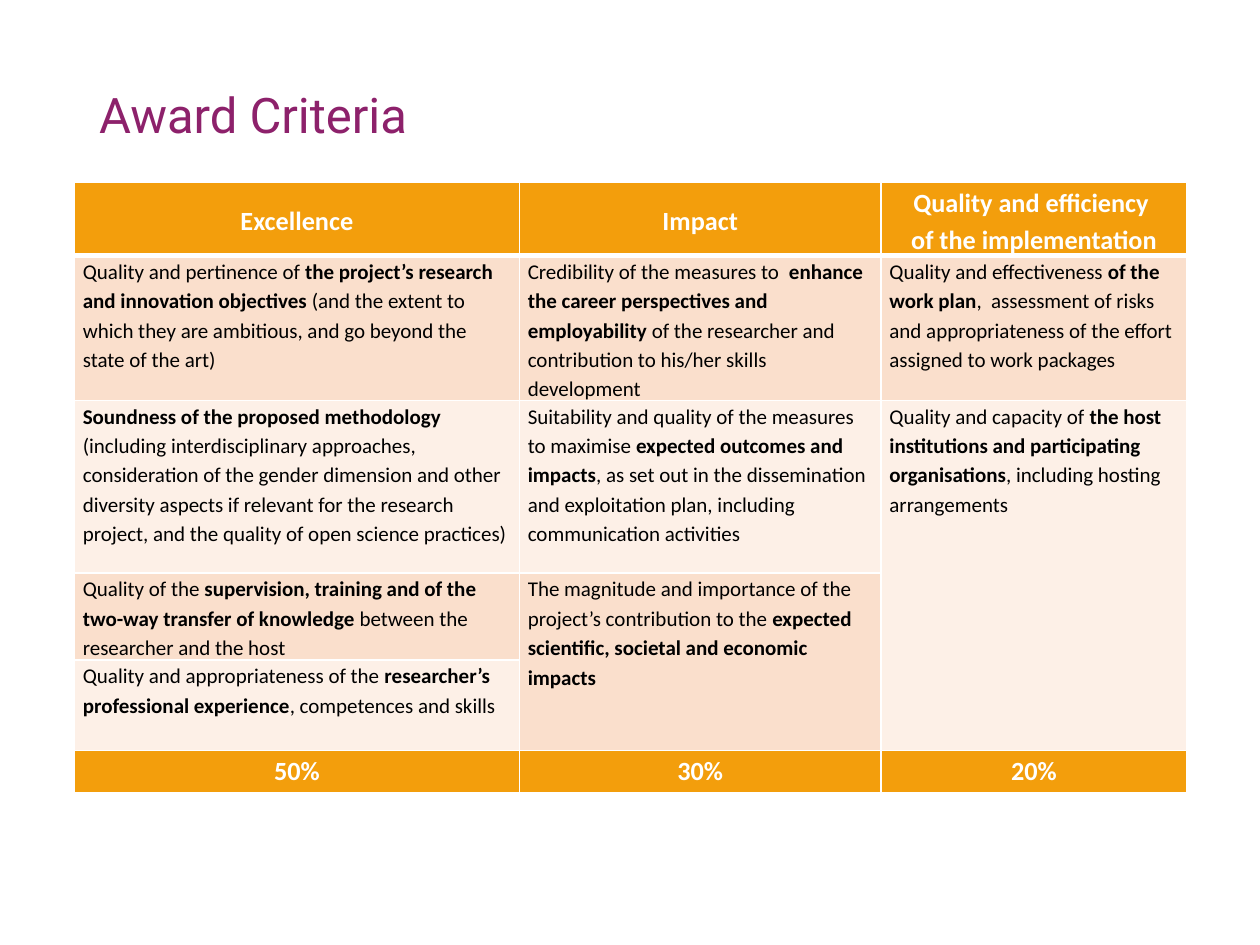
from pptx import Presentation
from pptx.dml.color import RGBColor
from pptx.enum.text import MSO_ANCHOR, PP_ALIGN
from pptx.oxml import parse_xml
from pptx.oxml.ns import nsdecls
from pptx.util import Cm, Pt

PURPLE = RGBColor(0x8D, 0x21, 0x6B)
ORANGE = RGBColor(0xF3, 0x9E, 0x0C)
PEACH = RGBColor(0xFA, 0xDF, 0xCC)
CREAM = RGBColor(0xFD, 0xF0, 0xE7)
WHITE = RGBColor(0xFF, 0xFF, 0xFF)
BLACK = RGBColor(0, 0, 0)

# Content: ** switches bold on and off, None continues the cell above
TITLE = "Award Criteria"
ROWS = [
    ["**Excellence", "**Impact", "**Quality and efficiency \vof the implementation"],
    ["Quality and pertinence of **the project’s research and innovation objectives** "
     "(and the extent to which they are ambitious, and go beyond the state of the art)",
     "Credibility of the measures to  **enhance the career perspectives and "
     "employability **of the researcher and contribution to his/her skills development",
     "Quality and effectiveness **of the work plan**,  assessment of risks and "
     "appropriateness of the effort assigned to work packages"],
    ["**Soundness of the proposed methodology **(including interdisciplinary approaches, "
     "consideration of the gender dimension and other diversity aspects if relevant for "
     "the research project, and the quality of open science practices)",
     "Suitability and quality of the measures to maximise **expected outcomes and "
     "impacts**, as set out in the dissemination and exploitation plan, including "
     "communication activities",
     "Quality and capacity of **the host institutions and participating "
     "organisations**, including hosting arrangements"],
    ["Quality of the **supervision, training and of the two-way transfer of knowledge** "
     "between the researcher and the host",
     "The magnitude and importance of the project’s contribution to the "
     "**expected scientific, societal and economic impacts",
     None],
    ["Quality and appropriateness of the **researcher’s professional experience**, "
     "competences and skills", None, None],
    ["**50%", "**30%", "**20%"],
]
ROW_FILLS = [ORANGE, PEACH, CREAM, PEACH, CREAM, ORANGE]
ROW_HEIGHTS = [1.47, 2.9, 3.48, 1.75, 1.83, 0.84]
COLUMN_WIDTHS = [8.97, 7.29, 6.17]


def add_borders(cell, top, bottom):
    """Draw white borders; top and bottom are widths in points."""
    properties = cell._tc.get_or_add_tcPr()
    for side, width in (("L", 1), ("R", 1), ("T", top), ("B", bottom)):
        properties.append(parse_xml(
            f'<a:ln{side} {nsdecls("a")} w="{Pt(width)}"><a:solidFill>'
            f'<a:srgbClr val="{WHITE}"/></a:solidFill></a:ln{side}>'))


def write_cell(cell, text, is_band):
    para = cell.text_frame.paragraphs[0]
    para.line_spacing = 1.15
    para.space_after = Pt(10)
    para.alignment = PP_ALIGN.CENTER if is_band else PP_ALIGN.LEFT
    for number, part in enumerate(text.split("**")):
        for line_number, line in enumerate(part.split("\v")):
            if line_number:
                para.add_line_break()
            if not line:
                continue
            span = para.add_run()
            span.text = line
            span.font.name = "Calibri"
            span.font.size = Pt(15 if is_band else 12)
            span.font.bold = number % 2 == 1
            span.font.color.rgb = WHITE if is_band else BLACK


deck = Presentation()
deck.slide_width, deck.slide_height = Cm(25.4), Cm(19.05)
page = deck.slides.add_slide(deck.slide_layouts[6])

# Title
box = page.shapes.add_textbox(Cm(1.75), Cm(1.02), Cm(21.9), Cm(2.69))
frame = box.text_frame
frame.word_wrap = True
frame.vertical_anchor = MSO_ANCHOR.MIDDLE
frame.text = TITLE
para = frame.paragraphs[0]
para.line_spacing = 0.9
font = para.runs[0].font
font.name, font.size, font.color.rgb = "Roboto", Pt(28), PURPLE

# Criteria table
table = page.shapes.add_table(
    len(ROWS), len(COLUMN_WIDTHS), Cm(1.5), Cm(3.68),
    Cm(sum(COLUMN_WIDTHS)), Cm(sum(ROW_HEIGHTS))).table
table.first_row = table.horz_banding = False
for column, width in zip(table.columns, COLUMN_WIDTHS):
    column.width = Cm(width)
for row, height in zip(table.rows, ROW_HEIGHTS):
    row.height = Cm(height)

for r, texts in enumerate(ROWS):
    for c, text in enumerate(texts):
        cell = table.cell(r, c)
        cell.margin_left = cell.margin_right = Cm(0.17)
        cell.margin_top = cell.margin_bottom = 0
        cell.vertical_anchor = MSO_ANCHOR.MIDDLE if r == 0 else MSO_ANCHOR.TOP
        add_borders(cell, top=3 if r == 1 else 1, bottom=3 if r == 0 else 1)
        cell.fill.solid()
        cell.fill.fore_color.rgb = ROW_FILLS[r]
        if text:
            write_cell(cell, text, ROW_FILLS[r] == ORANGE)

# Merge each cell with the empty ones below it
for c in range(len(COLUMN_WIDTHS)):
    empty = [r for r, texts in enumerate(ROWS) if texts[c] is None]
    if empty:
        table.cell(empty[0] - 1, c).merge(table.cell(empty[-1], c))

deck.save("out.pptx")
